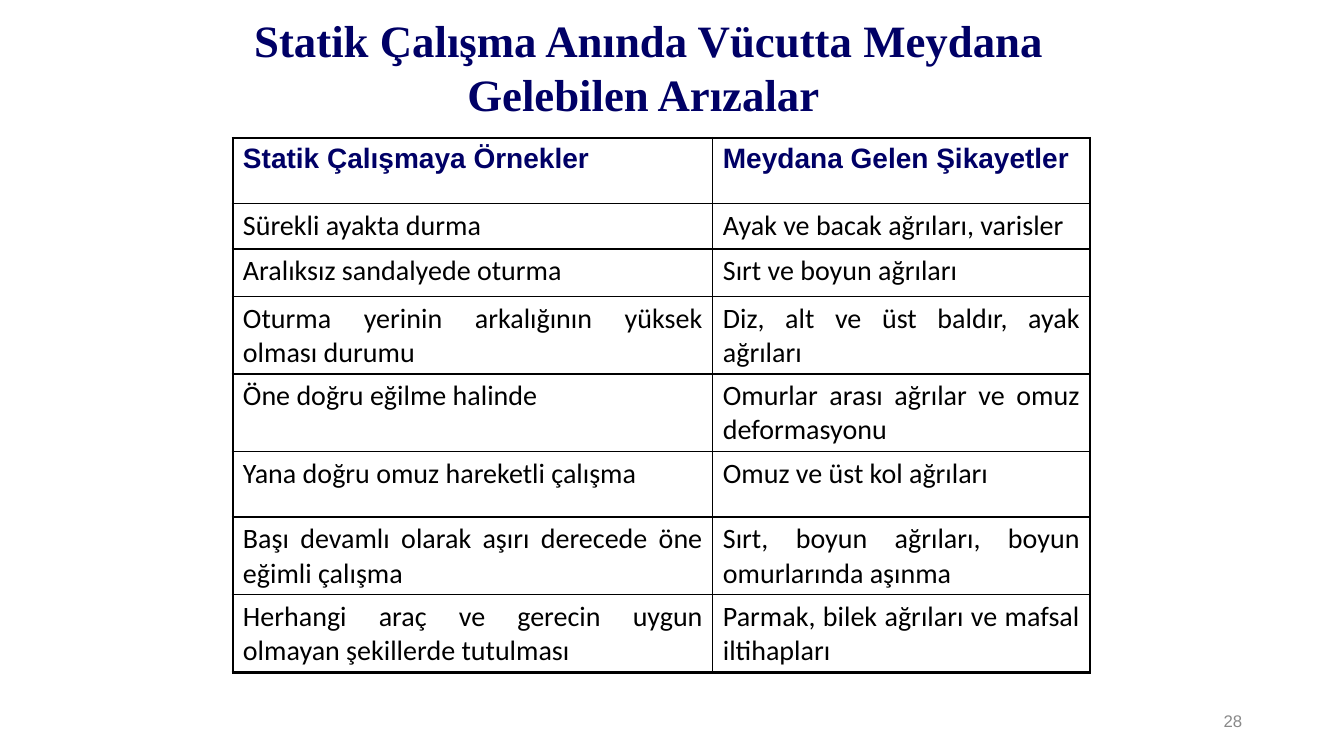
from lxml import etree
from pptx import Presentation
from pptx.dml.color import RGBColor
from pptx.enum.text import MSO_ANCHOR, MSO_AUTO_SIZE, PP_ALIGN
from pptx.oxml.ns import qn
from pptx.util import Inches, Pt

COLORS = {"navy": "000066", "black": "000000", "gray": "898989"}
ROWS = [
    (0.65, "Statik Çalışmaya Örnekler", "Meydana Gelen Şikayetler"),
    (0.45, "Sürekli ayakta durma", "Ayak ve bacak ağrıları, varisler"),
    (0.47, "Aralıksız sandalyede oturma", "Sırt ve boyun ağrıları"),
    (0.77, "Oturma yerinin arkalığının yüksek olması durumu",
     "Diz, alt ve üst baldır, ayak ağrıları"),
    (0.77, "Öne doğru eğilme halinde",
     "Omurlar arası ağrılar ve omuz deformasyonu"),
    (0.65, "Yana doğru omuz hareketli çalışma", "Omuz ve üst kol ağrıları"),
    (0.77, "Başı devamlı olarak aşırı derecede öne eğimli çalışma",
     "Sırt, boyun ağrıları, boyun omurlarında aşınma"),
    (0.77, "Herhangi araç ve gerecin uygun olmayan şekillerde tutulması",
     "Parmak, bilek ağrıları ve mafsal iltihapları"),
]
COL_WIDTHS = [4.76, 3.74]


def write(tf, text, align, color, **font):
    p = tf.paragraphs[0]
    p.alignment = align
    r = p.add_run()
    r.text = text
    r.font.color.rgb = RGBColor.from_string(COLORS[color])
    for name, value in font.items():
        setattr(r.font, name, value)


def add_border(cell, side, width):
    ln = etree.SubElement(cell._tc.get_or_add_tcPr(), qn(f"a:ln{side}"), w=str(Pt(width)))
    fill = etree.SubElement(ln, qn("a:solidFill"))
    etree.SubElement(fill, qn("a:srgbClr"), val=COLORS["black"])


prs = Presentation()
prs.slide_width, prs.slide_height = Inches(13.33), Inches(7.5)
s = prs.slides.add_slide(prs.slide_layouts[5])

title = s.shapes.title
title.left, title.top = Inches(2.14), Inches(0.08)
title.width, title.height = Inches(8.59), Inches(1.18)
tf = title.text_frame
tf.word_wrap = True
tf.auto_size = MSO_AUTO_SIZE.SHAPE_TO_FIT_TEXT
tf.vertical_anchor = MSO_ANCHOR.TOP
write(tf, "Statik Çalışma Anında Vücutta Meydana Gelebilen Arızalar ", PP_ALIGN.CENTER,
      "navy", size=Pt(32), name="Times New Roman", bold=True)

table = s.shapes.add_table(len(ROWS), len(COL_WIDTHS), Inches(2.31), Inches(1.37),
                           Inches(8.5), Inches(5.27)).table
table.first_row = table.horz_banding = False
for column, width in zip(table.columns, COL_WIDTHS):
    column.width = Inches(width)

for i, (height, *texts) in enumerate(ROWS):
    table.rows[i].height = Inches(height)
    header = i == 0
    for j, text in enumerate(texts):
        cell = table.cell(i, j)
        write(cell.text_frame, text, PP_ALIGN.JUSTIFY, "navy" if header else "black",
              size=Pt(20), name="Arial" if header else "Calibri", bold=header)
        outer = {"L": j == 0, "R": j == len(texts) - 1,
                 "T": header, "B": i == len(ROWS) - 1}
        for side, is_outer in outer.items():
            add_border(cell, side, 2.25 if is_outer else 1)
        cell.fill.background()

number = s.shapes.add_textbox(Inches(9.42), Inches(6.95), Inches(3), Inches(0.4))
tf = number.text_frame
tf.word_wrap = True
tf.vertical_anchor = MSO_ANCHOR.MIDDLE
write(tf, "28", PP_ALIGN.RIGHT, "gray", size=Pt(12), name="Arial")

prs.save("out.pptx")
